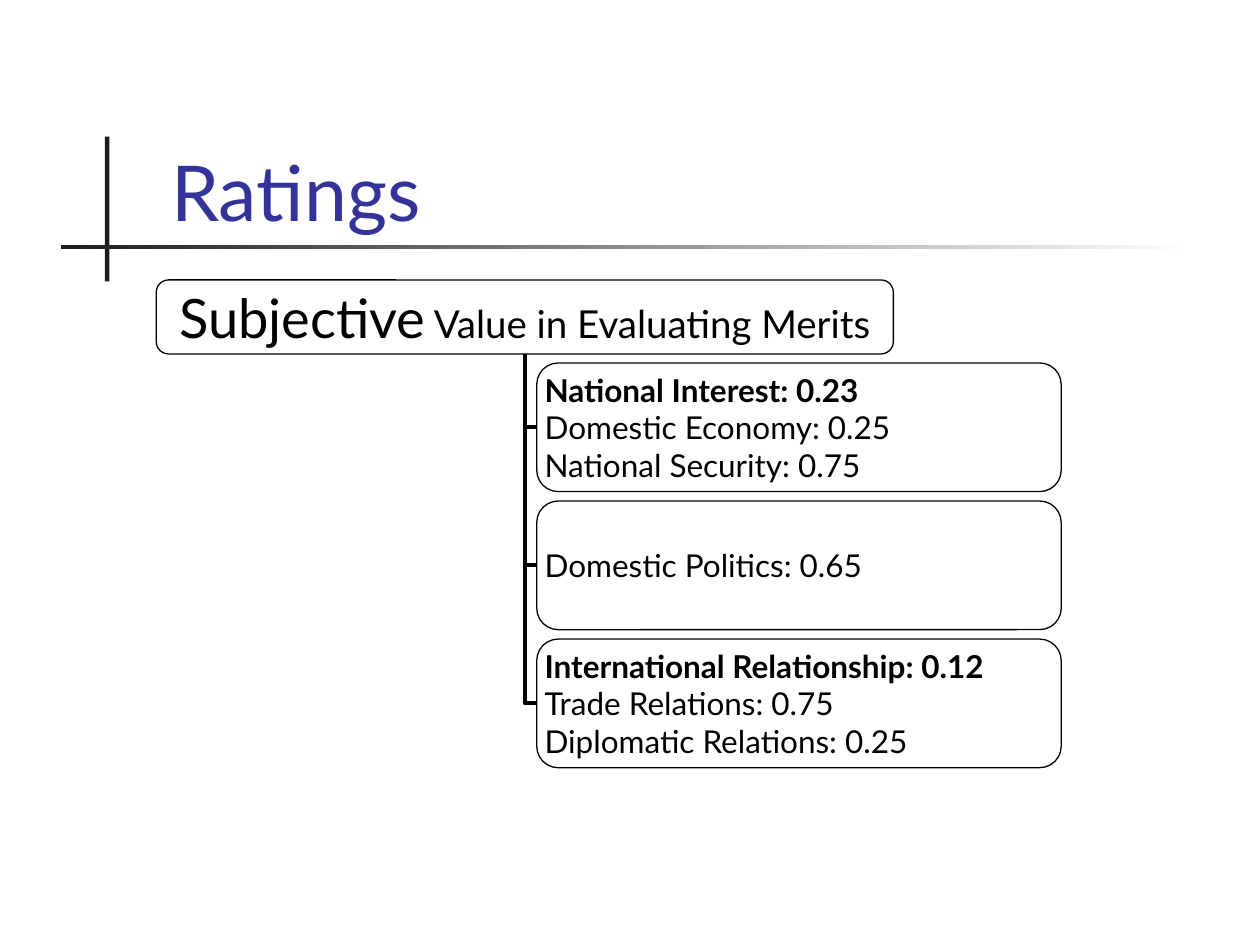
from dataclasses import dataclass

from lxml.etree import SubElement
from pptx import Presentation
from pptx.dml.color import RGBColor
from pptx.enum.shapes import MSO_CONNECTOR, MSO_SHAPE
from pptx.enum.text import MSO_ANCHOR, PP_ALIGN
from pptx.oxml.ns import qn
from pptx.util import Pt


@dataclass(frozen=True)
class Theme:
    """Hold the colours, font and type sizes of the slide."""

    font: str = "Lato"
    title: RGBColor = RGBColor(0x33, 0x33, 0x99)
    ink: RGBColor = RGBColor(0, 0, 0)
    rule: RGBColor = RGBColor(0x1C, 0x1C, 0x1C)
    paper: RGBColor = RGBColor(0xFF, 0xFF, 0xFF)
    title_size: int = 44
    lead_size: int = 31
    root_size: int = 22
    rating_size: int = 18


THEME = Theme()
ROOT_TEXT = [("Subjective", THEME.lead_size), (" Value in Evaluating Merits", THEME.root_size)]
RATINGS = [
    ["National Interest: 0.23", "Domestic Economy: 0.25", "National Security: 0.75"],
    ["Domestic Politics: 0.65"],
    ["International Relationship: 0.12", "Trade Relations: 0.75", "Diplomatic Relations: 0.25"],
]
RATING_TOP, RATING_PITCH = 207.4, 78.9


def style_font(font, size, color):
    """Apply the theme font with a size and a colour."""
    font.name = THEME.font
    font.size = Pt(size)
    font.color.rgb = color


def add_rule(slide, left, top, width, height, fades=False):
    """Add a thin bar, optionally fading to the paper colour."""
    bar = slide.shapes.add_shape(MSO_SHAPE.RECTANGLE, Pt(left), Pt(top), Pt(width), Pt(height))
    bar.shadow.inherit = False
    bar.line.fill.background()
    if fades:
        bar.fill.gradient()
        bar.fill.gradient_angle = 0
        for stop, color in zip(bar.fill.gradient_stops, (THEME.rule, THEME.paper)):
            stop.color.rgb = color
    else:
        bar.fill.solid()
        bar.fill.fore_color.rgb = THEME.rule


def set_title(slide, text):
    """Place and format the title placeholder."""
    title = slide.shapes.title
    title.left, title.top, title.width, title.height = Pt(90.7), Pt(49), Pt(613.5), Pt(90)
    title.text_frame.text = text
    title.text_frame.vertical_anchor = MSO_ANCHOR.BOTTOM
    paragraph = title.text_frame.paragraphs[0]
    paragraph.alignment = PP_ALIGN.LEFT
    style_font(paragraph.font, THEME.title_size, THEME.title)


def add_box(slide, left, top, width, height):
    """Add an outlined rounded box with narrow text margins."""
    box = slide.shapes.add_shape(
        MSO_SHAPE.ROUNDED_RECTANGLE, Pt(left), Pt(top), Pt(width), Pt(height)
    )
    box.shadow.inherit = False
    box.fill.background()
    box.line.color.rgb = THEME.ink
    box.line.width = Pt(0.75)
    frame = box.text_frame
    frame.word_wrap = True
    frame.vertical_anchor = MSO_ANCHOR.MIDDLE
    frame.margin_left = frame.margin_right = frame.margin_top = frame.margin_bottom = Pt(0.9)
    return box


def add_root(slide):
    """Add the heading box of the hierarchy."""
    root = add_box(slide, 89.3, 160, 421.2, 42.3)
    paragraph = root.text_frame.paragraphs[0]
    paragraph.alignment = PP_ALIGN.CENTER
    for text, size in ROOT_TEXT:
        run = paragraph.add_run()
        run.text = text
        style_font(run.font, size, THEME.ink)
    return root


def add_rating(slide, top, lines):
    """Add a box of ratings; the first of several lines is bold."""
    box = add_box(slide, 306.7, top, 299.7, 73.5)
    box.text_frame.text = "\n".join(lines)
    for index, paragraph in enumerate(box.text_frame.paragraphs):
        paragraph.alignment = PP_ALIGN.LEFT
        style_font(paragraph.font, THEME.rating_size, THEME.ink)
        paragraph.font.bold = index == 0 and len(lines) > 1
    return box


def add_branch(slide, child, root):
    """Join the left side of a child to the bottom of the root with one bend."""
    branch = slide.shapes.add_connector(MSO_CONNECTOR.ELBOW, 0, 0, 0, 0)
    branch.begin_connect(child, 1)
    branch.end_connect(root, 2)
    branch.line.color.rgb = THEME.ink
    branch.line.width = Pt(2.25)
    properties = branch._element.spPr
    properties.find(qn("a:prstGeom")).set("prst", "bentConnector2")
    SubElement(properties, qn("a:effectLst"))


def main():
    """Build the ratings slide and save it."""
    presentation = Presentation()
    presentation.slide_width, presentation.slide_height = Pt(720), Pt(540)
    slide = presentation.slides.add_slide(presentation.slide_layouts[5])
    add_rule(slide, 60, 78, 2.5, 82.8)
    add_rule(slide, 34.8, 140, 648, 2.5, fades=True)
    set_title(slide, "Ratings")
    root = add_root(slide)
    for index, lines in enumerate(RATINGS):
        child = add_rating(slide, RATING_TOP + index * RATING_PITCH, lines)
        add_branch(slide, child, root)
    presentation.save("out.pptx")


if __name__ == "__main__":
    main()
